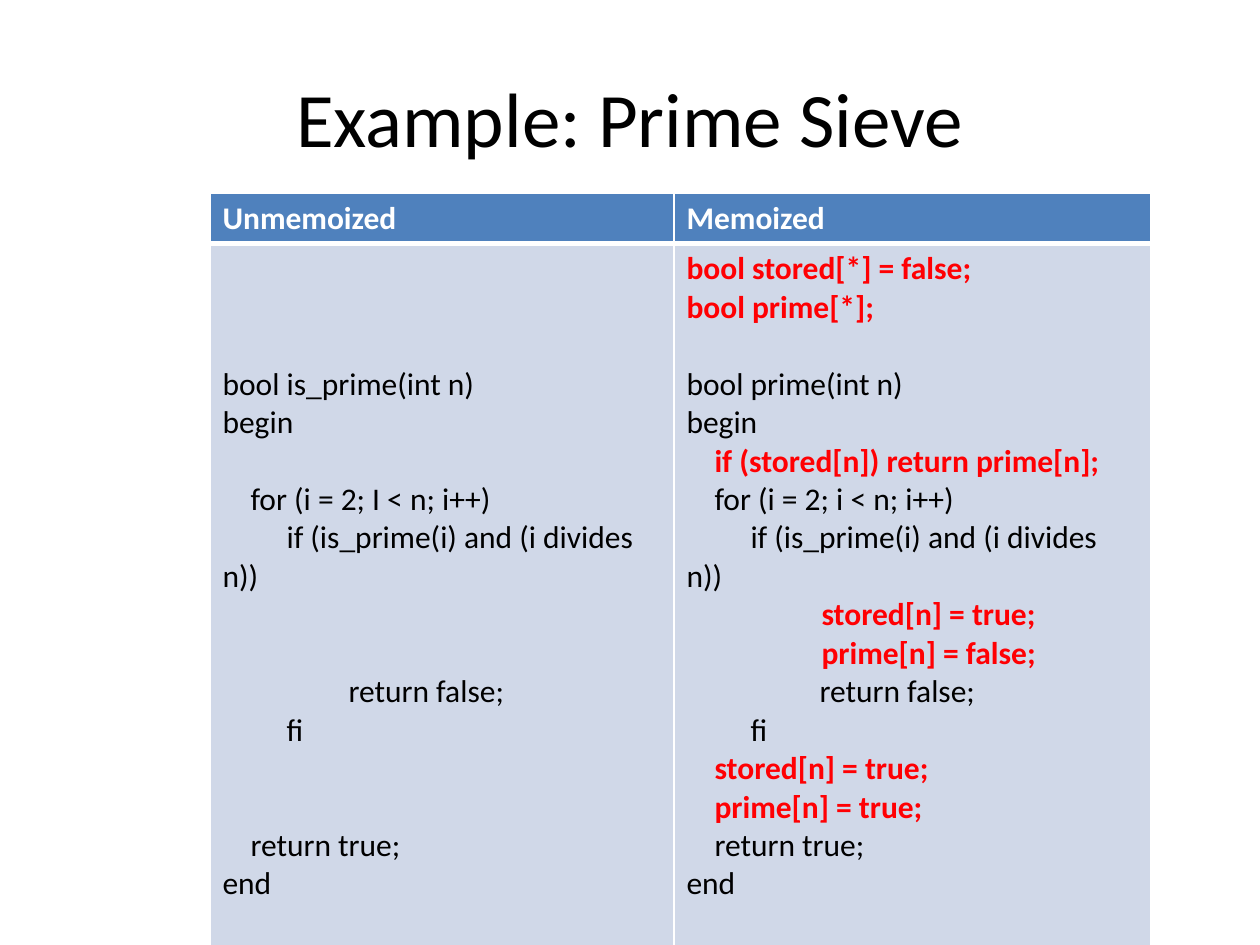
from lxml import etree
from pptx import Presentation
from pptx.dml.color import RGBColor
from pptx.enum.text import MSO_ANCHOR, PP_ALIGN
from pptx.oxml.ns import qn
from pptx.util import Pt

CENTER, LEFT = PP_ALIGN.CENTER, PP_ALIGN.LEFT
MIDDLE, TOP = MSO_ANCHOR.MIDDLE, MSO_ANCHOR.TOP
PX = 914400 // 126
LINE_PT = 21.96  # height of one 18 pt line
BLACK, WHITE, RED, BLUE, PALE = "000000", "FFFFFF", "FF0003", "4F81BD", "D0D8E8"

# Content: (blank lines before, first-line indent in px, text, colour)
TITLE = "Example: Prime Sieve"
HEADERS = ["Unmemoized", "Memoized"]
UNMEMOIZED = [
    (3, 0, "bool is_prime(int n)", BLACK),
    (0, 0, "begin", BLACK),
    (1, 28, "for (i = 2; I < n; i++)", BLACK),
    (0, 64, "if (is_prime(i) and (i divides n))", BLACK),
    (2, 126, "return false;", BLACK),
    (0, 64, "fi", BLACK),
    (2, 28, "return true;", BLACK),
    (0, 0, "end", BLACK),
]
MEMOIZED = [
    (0, 0, "bool stored[*] = false;", RED),
    (0, 0, "bool prime[*];", RED),
    (1, 0, "bool prime(int n)", BLACK),
    (0, 0, "begin", BLACK),
    (0, 28, "if (stored[n]) return prime[n];", RED),
    (0, 28, "for (i = 2; i < n; i++)", BLACK),
    (0, 64, "if (is_prime(i) and (i divides n))", BLACK),
    (0, 135, "stored[n] = true;", RED),
    (0, 135, "prime[n] = false;", RED),
    (0, 133, "return false;", BLACK),
    (0, 64, "fi", BLACK),
    (0, 28, "stored[n] = true;", RED),
    (0, 28, "prime[n] = true;", RED),
    (0, 28, "return true;", BLACK),
    (0, 0, "end", BLACK),
]
COLUMNS = [464, 477]
ROWS = [50, 702]


def rgb(value):
    return RGBColor.from_string(value)


def write(p, text, size=18, color=BLACK, bold=False, align=LEFT, before=0, indent=0):
    p.alignment = align
    p.space_before = Pt(before)
    pPr = p._p.get_or_add_pPr()
    pPr.set("marL", "0")
    pPr.set("indent", str(indent * PX))
    r = p.add_run()
    r.text = text
    r.font.name = "Calibri"
    r.font.size = Pt(size)
    r.font.bold = bold
    r.font.color.rgb = rgb(color)


def style_cell(cell, fill, bottom):
    tcPr = cell._tc.get_or_add_tcPr()
    for side, width in (("L", 1), ("R", 1), ("T", 1), ("B", bottom)):
        ln = etree.SubElement(tcPr, qn("a:ln" + side), w=str(Pt(width)))
        solid = etree.SubElement(ln, qn("a:solidFill"))
        etree.SubElement(solid, qn("a:srgbClr"), val=WHITE)
    cell.fill.solid()
    cell.fill.fore_color.rgb = rgb(fill)
    cell.vertical_anchor = TOP


prs = Presentation()
prs.slide_width, prs.slide_height = 1260 * PX, 945 * PX
s = prs.slides.add_slide(prs.slide_layouts[6])

# Title
tf = s.shapes.add_textbox(63 * PX, 38 * PX, 1134 * PX, 157 * PX).text_frame
tf.word_wrap = True
tf.vertical_anchor = MIDDLE
write(tf.paragraphs[0], TITLE, size=44, align=CENTER)

# Comparison table
table = s.shapes.add_table(2, 2, 210 * PX, 193 * PX,
                           sum(COLUMNS) * PX, sum(ROWS) * PX).table
for row, height in zip(table.rows, ROWS):
    row.height = height * PX

for c, (header, code) in enumerate(zip(HEADERS, (UNMEMOIZED, MEMOIZED))):
    table.columns[c].width = COLUMNS[c] * PX
    head, body = table.cell(0, c), table.cell(1, c)
    style_cell(head, BLUE, 3)
    write(head.text_frame.paragraphs[0], header, color=WHITE, bold=True)

    style_cell(body, PALE, 1)
    # Blank lines above the first line become the cell's top margin
    body.margin_top = Pt(3.6 + code[0][0] * LINE_PT)
    tf = body.text_frame
    for i, (blank, indent, text, color) in enumerate(code):
        p = tf.add_paragraph() if i else tf.paragraphs[0]
        write(p, text, color=color, bold=color == RED, indent=indent,
              before=blank * LINE_PT if i else 0)

prs.save("out.pptx")
